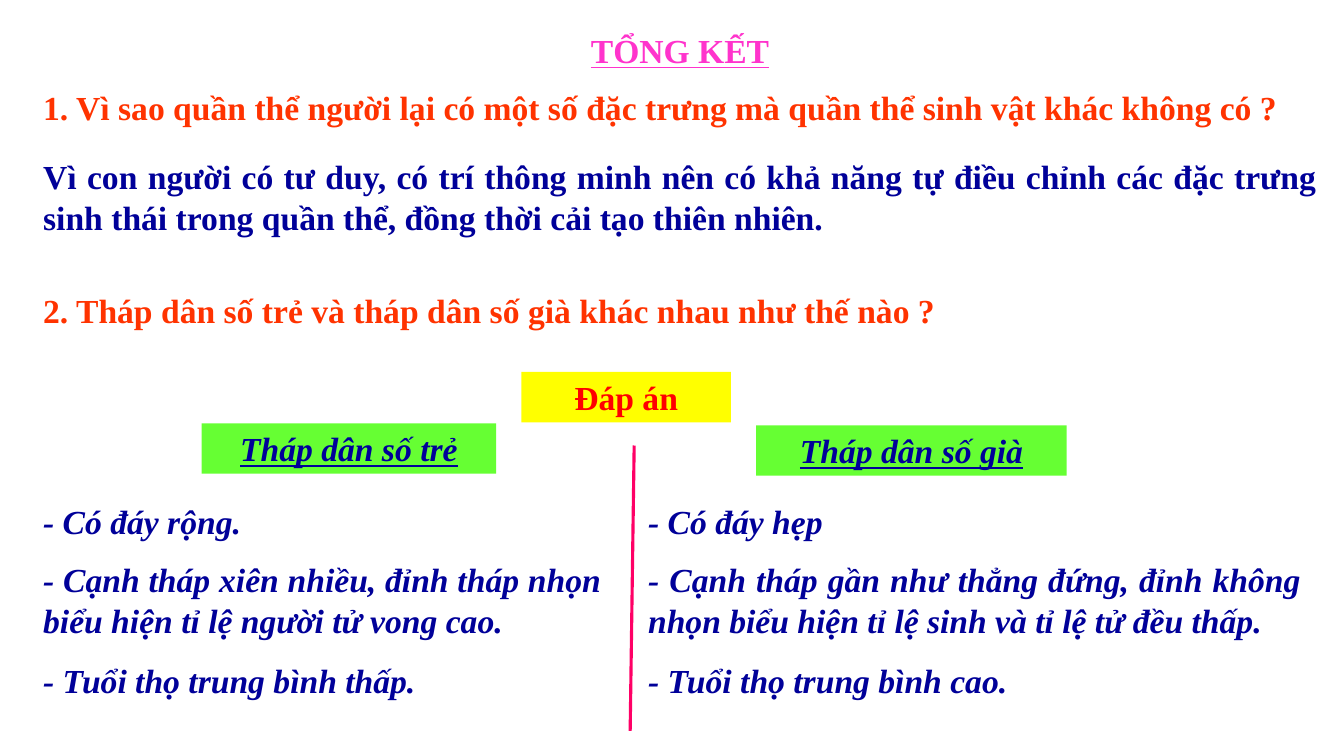
from dataclasses import dataclass

from pptx import Presentation
from pptx.dml.color import RGBColor
from pptx.enum.shapes import MSO_CONNECTOR as Connector, MSO_SHAPE as Shape
from pptx.enum.text import MSO_AUTO_SIZE as AutoSize, PP_ALIGN as Align
from pptx.oxml.ns import qn
from pptx.util import Inches, Pt


@dataclass(frozen=True)
class Theme:
    font: str = "Times New Roman"
    size: int = 24
    gap: int = 12
    divider_width: float = 2.25
    title: str = "FF33CC"
    question: str = "FF3300"
    body: str = "000099"
    answer: str = "FF0000"
    answer_fill: str = "FFFF00"
    heading_fill: str = "66FF33"
    divider: str = "FF0066"


THEME = Theme()
LEFT, WIDTH = 0.33, 12.83
LINE_HEIGHT, TWO_LINE_HEIGHT = 0.5, 0.91
HEADING = {"italic": True, "underline": True}
POINT = {"italic": True}


def color(value):
    return RGBColor.from_string(value)


def write(para, text, ink, align=Align.JUSTIFY, **style):
    para.alignment = align
    span = para.add_run()
    span.text = text
    span.font.color.rgb = color(ink)
    values = {"name": THEME.font, "size": Pt(THEME.size), "bold": True} | style
    for name, value in values.items():
        setattr(span.font, name, value)


def fit(frame):
    frame.word_wrap = True
    frame.auto_size = AutoSize.SHAPE_TO_FIT_TEXT
    return frame


def add_text(page, box, text, ink, align=Align.JUSTIFY, **style):
    frame = fit(page.shapes.add_textbox(*map(Inches, box)).text_frame)
    write(frame.paragraphs[0], text, ink, align, **style)
    return frame


def add_label(page, box, text, ink, fill, **style):
    label = page.shapes.add_shape(Shape.RECTANGLE, *map(Inches, box))
    label.shadow.inherit = False
    label.fill.solid()
    label.fill.fore_color.rgb = color(fill)
    label.line.fill.background()
    write(fit(label.text_frame).paragraphs[0], text, ink, Align.CENTER, **style)


def add_questions(page, left, top, width):
    frame = add_text(page, (left, top, width, 1.11), "TỔNG KẾT",
                     THEME.title, Align.CENTER, underline=True)
    para = frame.add_paragraph()
    para.space_before = Pt(THEME.gap)
    write(para, "1. Vì sao quần thể người lại có một số đặc trưng mà "
          "quần thể sinh vật khác không có ?", THEME.question)
    add_text(page, (left, top + 1.25, width, TWO_LINE_HEIGHT),
             "Vì con người có tư duy, có trí thông minh nên có khả năng tự "
             "điều chỉnh các đặc trưng sinh thái trong quần thể, đồng thời "
             "cải tạo thiên nhiên.", THEME.body)
    add_text(page, (left, top + 2.58, width, LINE_HEIGHT),
             "2. Tháp dân số trẻ và tháp dân số già khác nhau như thế nào ?",
             THEME.question)


def add_points(page, left, top, width, points):
    """Place the short, long and short points of one pyramid."""
    base, sides, lifespan = points
    rows = [(0, LINE_HEIGHT, base, Align.LEFT),
            (0.58, TWO_LINE_HEIGHT, sides, Align.JUSTIFY),
            (1.58, LINE_HEIGHT, lifespan, Align.LEFT)]
    for offset, height, text, align in rows:
        add_text(page, (left, top + offset, width, height), text,
                 THEME.body, align, **POINT)


def add_divider(page, start, end):
    divider = page.shapes.add_connector(
        Connector.STRAIGHT, *map(Inches, start + end))
    divider.line.color.rgb = color(THEME.divider)
    divider.line.width = Pt(THEME.divider_width)
    properties = divider._element.spPr
    properties.append(properties.makeelement(qn("a:effectLst"), {}))


def add_comparison(page, left, top):
    add_label(page, (left + 4.84, top, 2.08, LINE_HEIGHT), "Đáp án",
              THEME.answer, THEME.answer_fill)
    headings = [(1.67, 0.51, 2.92, "Tháp dân số trẻ"),
                (7.17, 0.53, 3.08, "Tháp dân số già")]
    for x, y, width, text in headings:
        add_label(page, (left + x, top + y, width, LINE_HEIGHT), text,
                  THEME.body, THEME.heading_fill, **HEADING)
    add_points(page, left, top + 1.23, 5.73, (
        "- Có đáy rộng.",
        "- Cạnh tháp xiên nhiều, đỉnh tháp nhọn biểu hiện tỉ lệ người "
        "tử vong cao.",
        "- Tuổi thọ trung bình thấp."))
    add_points(page, left + 6, top + 1.23, 6.67, (
        "- Có đáy hẹp",
        "- Cạnh tháp gần như thẳng đứng, đỉnh không nhọn biểu hiện tỉ lệ "
        "sinh và tỉ lệ tử đều thấp.",
        "- Tuổi thọ trung bình cao."))
    add_divider(page, (left + 5.96, top + 0.73), (left + 5.92, top + 3.56))


def main():
    deck = Presentation()
    deck.slide_width, deck.slide_height = Inches(13.33), Inches(7.5)
    page = deck.slides.add_slide(deck.slide_layouts[6])
    add_questions(page, LEFT, 0.25, WIDTH)
    add_comparison(page, LEFT, 3.69)
    deck.save("out.pptx")


if __name__ == "__main__":
    main()
